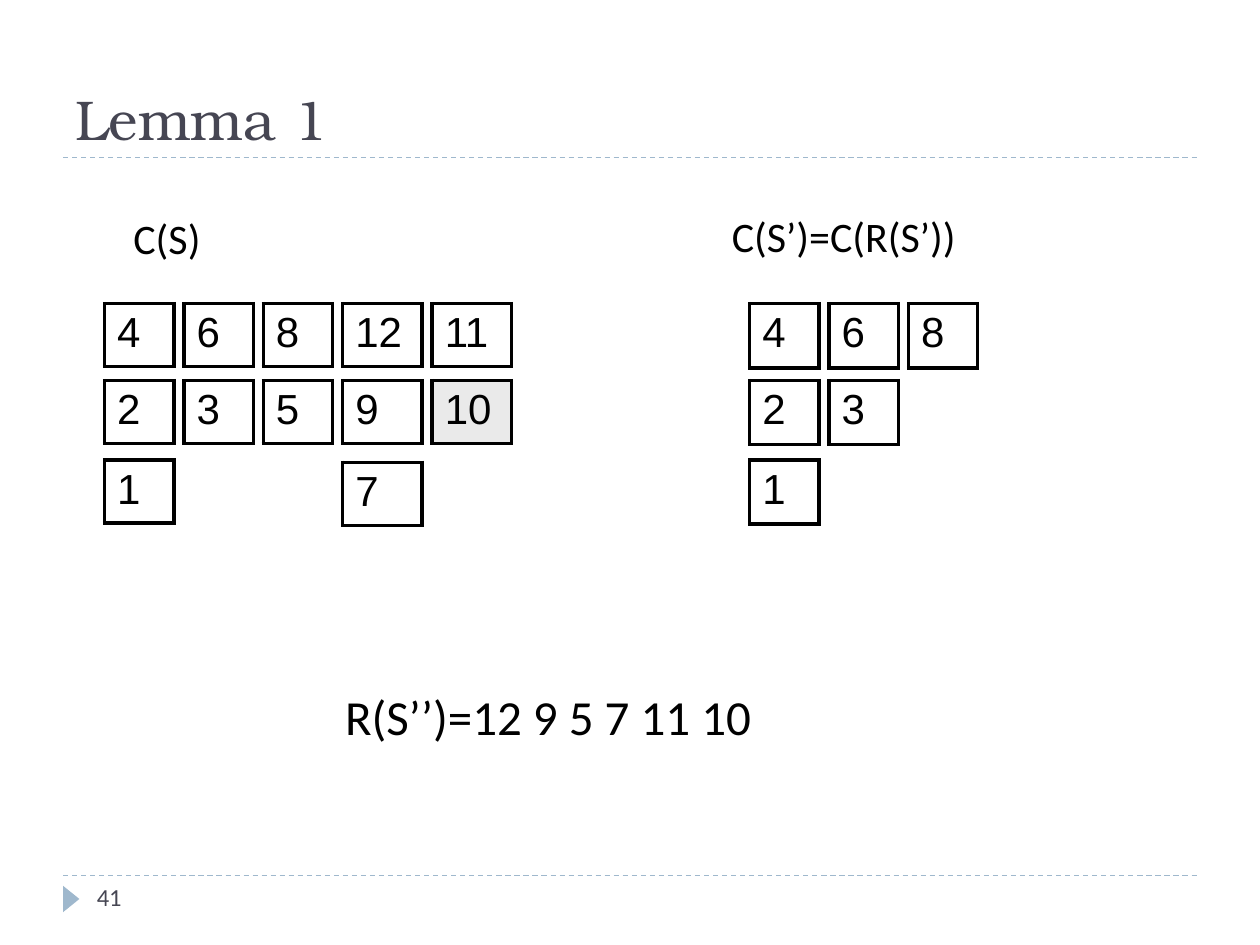
from dataclasses import dataclass

from lxml import etree
from pptx import Presentation
from pptx.dml.color import RGBColor
from pptx.enum.dml import MSO_LINE_DASH_STYLE as Dash
from pptx.enum.shapes import MSO_CONNECTOR as Connector, MSO_SHAPE as Shape
from pptx.enum.text import MSO_ANCHOR as Anchor, MSO_AUTO_SIZE as AutoSize
from pptx.oxml.ns import qn
from pptx.util import Inches, Pt


@dataclass(frozen=True)
class Theme:
    ink: str = "000000"
    heading: str = "464653"
    accent: str = "9FB8CD"
    highlight: str = "EAEAEA"
    title_font: str = "TeX Gyre Bonum"
    body_font: str = "Calibri"
    card_font: str = "Arial"
    title_size: int = 32
    result_size: int = 28
    body_size: int = 24
    number_size: int = 14
    card_border: float = 2.25
    rule_width: float = 0.75


THEME = Theme()
CARD_GAP = 0.08
ROW_OFFSETS = (0, 0.61, 1.24)
NARROW, WIDE = 0.55, 0.63


def add_run(paragraph, text, font, size, color):
    run = paragraph.add_run()
    run.text = text
    run.font.name = font
    run.font.size = Pt(size)
    run.font.color.rgb = RGBColor.from_string(color)


def add_text(slide, box, text, font, size, color, anchor=Anchor.TOP, wrap=True):
    label = slide.shapes.add_textbox(*map(Inches, box))
    frame = label.text_frame
    frame.word_wrap = wrap
    frame.auto_size = AutoSize.NONE if wrap else AutoSize.SHAPE_TO_FIT_TEXT
    frame.vertical_anchor = anchor
    add_run(frame.paragraphs[0], text, font, size, color)


def add_caption(slide, box, text, size=THEME.body_size):
    add_text(slide, box, text, THEME.body_font, size, THEME.ink, wrap=False)


def add_rule(slide, left, top, width):
    rule = slide.shapes.add_connector(
        Connector.STRAIGHT, Inches(left), Inches(top), Inches(left + width), Inches(top))
    rule.line.color.rgb = RGBColor.from_string(THEME.accent)
    rule.line.width = Pt(THEME.rule_width)
    rule.line.dash_style = Dash.DASH
    etree.SubElement(rule._element.spPr, qn("a:effectLst"))


def add_borders(cell):
    properties = cell._tc.get_or_add_tcPr()
    for side in ("a:lnL", "a:lnR", "a:lnT", "a:lnB"):
        border = etree.SubElement(properties, qn(side), w=str(Pt(THEME.card_border)))
        fill = etree.SubElement(border, qn("a:solidFill"))
        etree.SubElement(fill, qn("a:srgbClr"), val=THEME.ink)


def add_card(slide, box, value, fill=None):
    """Draw one card as a single-cell table."""
    table = slide.shapes.add_table(1, 1, *map(Inches, box)).table
    table.first_row = table.horz_banding = False
    cell = table.cell(0, 0)
    add_borders(cell)
    if fill:
        cell.fill.solid()
        cell.fill.fore_color.rgb = RGBColor.from_string(fill)
    else:
        cell.fill.background()
    add_run(cell.text_frame.paragraphs[0], value,
            THEME.card_font, THEME.body_size, THEME.ink)


def add_piles(slide, left, top, card_height, piles, highlighted=None, lowered=None):
    """Lay out piles of (card width, values from top) from left to right."""
    for width, values in piles:
        for value, offset in zip(values, ROW_OFFSETS):
            drop = 0.02 if value == lowered else 0
            fill = THEME.highlight if value == highlighted else None
            add_card(slide, (left, top + offset + drop, width, card_height), value, fill)
        left += width + CARD_GAP


def add_header(slide, left, top, width, height):
    add_rule(slide, left, top + height, width)
    add_text(slide, (left, top, width, height), "Lemma 1", THEME.title_font,
             THEME.title_size, THEME.heading, Anchor.BOTTOM)


def add_footer(slide, left, top, width):
    add_rule(slide, left, top, width)
    marker = slide.shapes.add_shape(
        Shape.ISOSCELES_TRIANGLE, Inches(left - 0.04), Inches(top + 0.12),
        Inches(0.21), Inches(0.13))
    marker.rotation = 90
    marker.shadow.inherit = False
    marker.fill.solid()
    marker.fill.fore_color.rgb = RGBColor.from_string(THEME.accent)
    marker.line.fill.background()
    add_text(slide, (left + 0.17, top, 2.17, 0.4), "41", THEME.body_font,
             THEME.number_size, THEME.heading)


def add_full_configuration(slide, left, top):
    add_caption(slide, (left + 0.13, top, 0.89, 0.5), "C(S)")
    piles = [(NARROW, ["4", "2", "1"]), (NARROW, ["6", "3"]), (NARROW, ["8", "5"]),
             (WIDE, ["12", "9", "7"]), (WIDE, ["11", "10"])]
    add_piles(slide, left, top + 0.77, 0.48, piles, highlighted="10", lowered="7")


def add_reduced_configuration(slide, left, top):
    add_caption(slide, (left - 0.24, top - 0.02, 2.38, 0.5), "C(S’)=C(R(S’))")
    piles = [(NARROW, ["4", "2", "1"]), (NARROW, ["6", "3"]), (NARROW, ["8"])]
    add_piles(slide, left, top + 0.77, 0.51, piles)


def main():
    deck = Presentation()
    deck.slide_width, deck.slide_height = Inches(10), Inches(7.5)
    slide = deck.slides.add_slide(deck.slide_layouts[6])
    add_footer(slide, 0.5, 6.95, 9)
    add_header(slide, 0.5, 0.17, 9, 1.08)
    add_full_configuration(slide, 0.83, 1.64)
    add_reduced_configuration(slide, 5.95, 1.64)
    add_caption(slide, (2.64, 5.4, 3.89, 0.57), "R(S’’)=12 9 5 7 11 10",
                THEME.result_size)
    deck.save("out.pptx")


if __name__ == "__main__":
    main()
